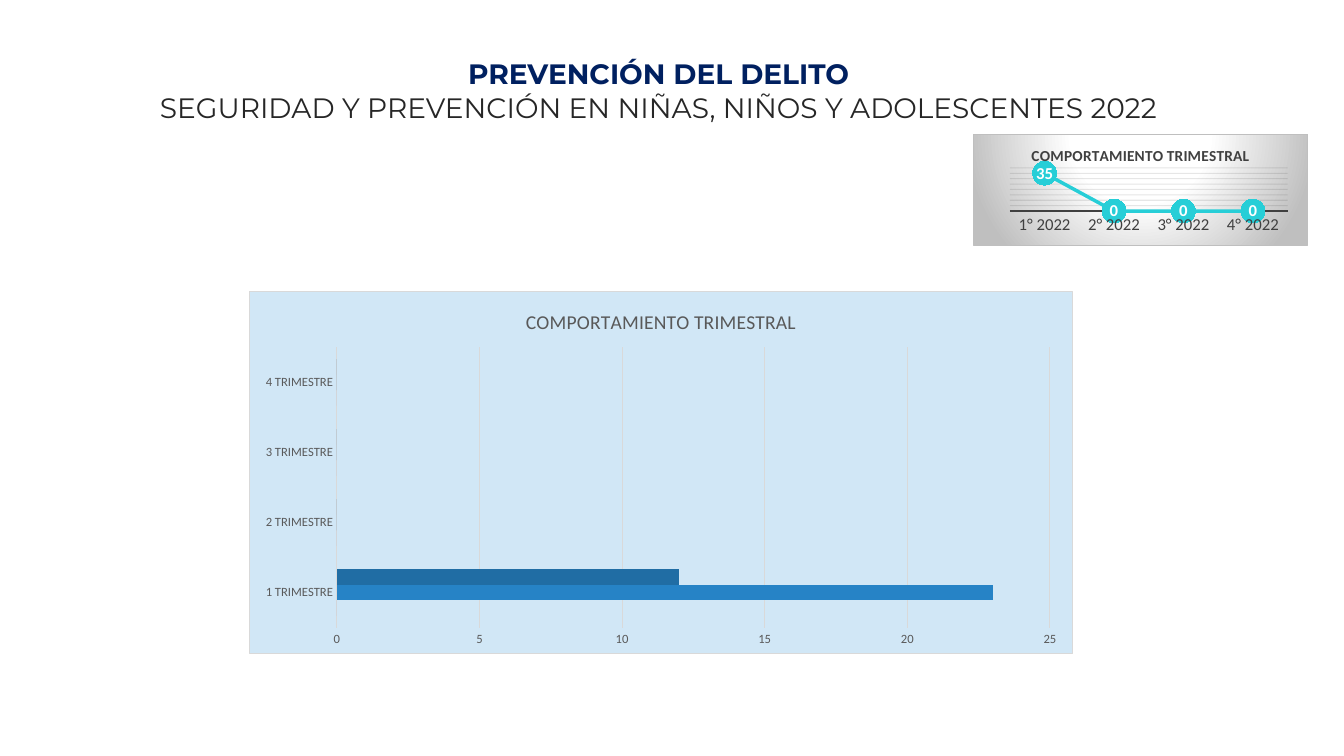
from dataclasses import dataclass

from lxml import etree
from pptx import Presentation
from pptx.chart.data import CategoryChartData
from pptx.dml.color import RGBColor
from pptx.enum.chart import XL_CHART_TYPE, XL_LABEL_POSITION, XL_MARKER_STYLE, XL_TICK_MARK
from pptx.enum.text import PP_ALIGN
from pptx.oxml import parse_xml
from pptx.oxml.ns import nsdecls, qn
from pptx.util import Cm, Pt

LINE_MARKERS = XL_CHART_TYPE.LINE_MARKERS
BAR_CLUSTERED = XL_CHART_TYPE.BAR_CLUSTERED
LABEL_CENTER = XL_LABEL_POSITION.CENTER
CIRCLE = XL_MARKER_STYLE.CIRCLE
NO_TICK = XL_TICK_MARK.NONE
CENTER = PP_ALIGN.CENTER


@dataclass(frozen=True)
class Theme:
    heading_font: str = "Montserrat"
    chart_font: str = "Calibri"
    navy: str = "002060"
    ink: str = "262626"
    dark: str = "404040"
    gray: str = "595959"
    black: str = "000000"
    white: str = "FFFFFF"
    silver: str = "BFBFBF"
    border: str = "D9D9D9"
    faint_grid: str = "0D0D0D"
    turquoise: str = "27CED7"
    panel: str = "D1E7F6"
    bars: tuple = ("A3BBDC", "2683C6", "206DA4")
    heading_size: float = 20
    trend_title_size: float = 11
    bar_title_size: float = 14
    label_size: float = 12
    chart_size: float = 10
    axis_size: float = 9


@dataclass(frozen=True)
class Box:
    left: float
    top: float
    width: float
    height: float

    def lengths(self):
        return Cm(self.left), Cm(self.top), Cm(self.width), Cm(self.height)


THEME = Theme()
CHART_TITLE = "COMPORTAMIENTO TRIMESTRAL"


def set_font(font, family, size, color, bold=False):
    for name, value in {"name": family, "size": Pt(size), "bold": bold}.items():
        setattr(font, name, value)
    font.color.rgb = RGBColor.from_string(color)


def set_line(line, color, width):
    line.color.rgb = RGBColor.from_string(color)
    line.width = Pt(width)


def set_fill(fill, color):
    fill.solid()
    fill.fore_color.rgb = RGBColor.from_string(color)


def solid_xml(color):
    return f'<a:solidFill><a:srgbClr val="{color}"/></a:solidFill>'


def radial_xml(stops):
    stops_xml = "".join(
        f'<a:gs pos="{percent * 1000}"><a:srgbClr val="{color}"/></a:gs>' for percent, color in stops
    )
    return (
        f'<a:gradFill><a:gsLst>{stops_xml}</a:gsLst><a:path path="circle">'
        '<a:fillToRect l="50000" t="-80000" r="50000" b="180000"/></a:path></a:gradFill>'
    )


def set_chart_area(chart, fill_xml, border):
    chart.element.find(qn("c:chart")).addnext(parse_xml(
        f'<c:spPr {nsdecls("c", "a")}>{fill_xml}<a:ln w="9525">{solid_xml(border)}</a:ln></c:spPr>'
    ))


def set_plot_layout(chart, **fractions):
    plot_area = chart.element.find(f'{qn("c:chart")}/{qn("c:plotArea")}')
    for layout in plot_area.findall(qn("c:layout")):
        plot_area.remove(layout)
    edges = "".join(f'<c:{edge} val="{value}"/>' for edge, value in fractions.items())
    plot_area.insert(0, parse_xml(
        f'<c:layout {nsdecls("c")}><c:manualLayout><c:layoutTarget val="inner"/>'
        f'<c:xMode val="edge"/><c:yMode val="edge"/>{edges}</c:manualLayout></c:layout>'
    ))


def add_quarter_chart(slide, box, kind, quarters, rows, title_size, title_color, title_bold):
    data = CategoryChartData()
    data.categories = quarters
    for number, values in enumerate(rows, 1):
        data.add_series(f"Series {number}", values)
    chart = slide.shapes.add_chart(kind, *box.lengths(), data).chart
    set_font(chart.font, THEME.chart_font, THEME.chart_size, THEME.black)
    chart.has_legend = False
    chart.has_title = True
    chart.chart_title.include_in_layout = False
    title = chart.chart_title.text_frame.paragraphs[0].add_run()
    title.text = CHART_TITLE
    set_font(title.font, THEME.chart_font, title_size, title_color, title_bold)
    chart.plots[0].vary_by_categories = False
    for axis in (chart.category_axis, chart.value_axis):
        axis.major_tick_mark = axis.minor_tick_mark = NO_TICK
    chart.value_axis.has_major_gridlines = True
    return chart


def add_heading(slide, box):
    frame = slide.shapes.add_textbox(*box.lengths()).text_frame
    frame.word_wrap = True
    lines = (
        ("PREVENCIÓN DEL DELITO", THEME.navy, True),
        ("SEGURIDAD Y PREVENCIÓN EN NIÑAS, NIÑOS Y ADOLESCENTES 2022", THEME.ink, False),
    )
    for index, (text, color, bold) in enumerate(lines):
        paragraph = frame.add_paragraph() if index else frame.paragraphs[0]
        paragraph.alignment = CENTER
        run = paragraph.add_run()
        run.text = text
        set_font(run.font, THEME.heading_font, THEME.heading_size, color, bold)


def add_trend(slide, box):
    quarters = [f"{number}° 2022" for number in range(1, 5)]
    chart = add_quarter_chart(slide, box, LINE_MARKERS, quarters, [(35, 0, 0, 0)],
                              THEME.trend_title_size, THEME.dark, True)
    set_chart_area(chart, radial_xml(((0, THEME.white), (39, THEME.white), (100, THEME.silver))),
                   THEME.silver)
    set_plot_layout(chart, x=0.11, y=0.3, w=0.83, h=0.39)
    set_font(chart.category_axis.tick_labels.font, THEME.chart_font, THEME.label_size, THEME.dark)
    set_line(chart.category_axis.format.line, THEME.dark, 1.5)
    scale = {"visible": False, "minimum_scale": 0, "maximum_scale": 40, "major_unit": 5}
    for name, value in scale.items():
        setattr(chart.value_axis, name, value)
    set_line(chart.value_axis.major_gridlines.format.line, THEME.faint_grid, 0.75)
    for color in chart.element.xpath(".//c:majorGridlines//a:srgbClr"):
        etree.SubElement(color, qn("a:alpha")).set("val", "10000")
    trend = chart.plots[0].series[0]
    trend.smooth = False
    set_line(trend.format.line, THEME.turquoise, 2.5)
    trend.marker.style = CIRCLE
    trend.marker.size = 17
    set_fill(trend.marker.format.fill, THEME.turquoise)
    trend.marker.format.line.fill.background()
    labels = trend.data_labels
    labels.show_value = True
    labels.position = LABEL_CENTER
    set_font(labels.font, THEME.chart_font, THEME.label_size, THEME.white, True)


def add_bars(slide, box):
    quarters = [f"{number} TRIMESTRE" for number in range(1, 5)]
    rows = [(first, 0, 0, 0) for first in (0, 23, 12)]
    chart = add_quarter_chart(slide, box, BAR_CLUSTERED, quarters, rows,
                              THEME.bar_title_size, THEME.gray, False)
    set_chart_area(chart, solid_xml(THEME.panel), THEME.border)
    chart.plots[0].gap_width = 150
    for axis in (chart.category_axis, chart.value_axis):
        set_font(axis.tick_labels.font, THEME.chart_font, THEME.axis_size, THEME.gray)
        axis.format.line.fill.background()
    set_line(chart.value_axis.major_gridlines.format.line, THEME.border, 0.75)
    for series, color in zip(chart.plots[0].series, THEME.bars):
        set_fill(series.format.fill, color)


def main():
    deck = Presentation()
    deck.slide_width, deck.slide_height = Cm(33.87), Cm(19.05)
    slide = deck.slides.add_slide(deck.slide_layouts[6])
    add_trend(slide, Box(24.51, 3.38, 8.46, 2.82))
    add_heading(slide, Box(0, 1.3, 33.2, 2.1))
    add_bars(slide, Box(6.27, 7.34, 20.78, 9.14))
    deck.save("out.pptx")


if __name__ == "__main__":
    main()
